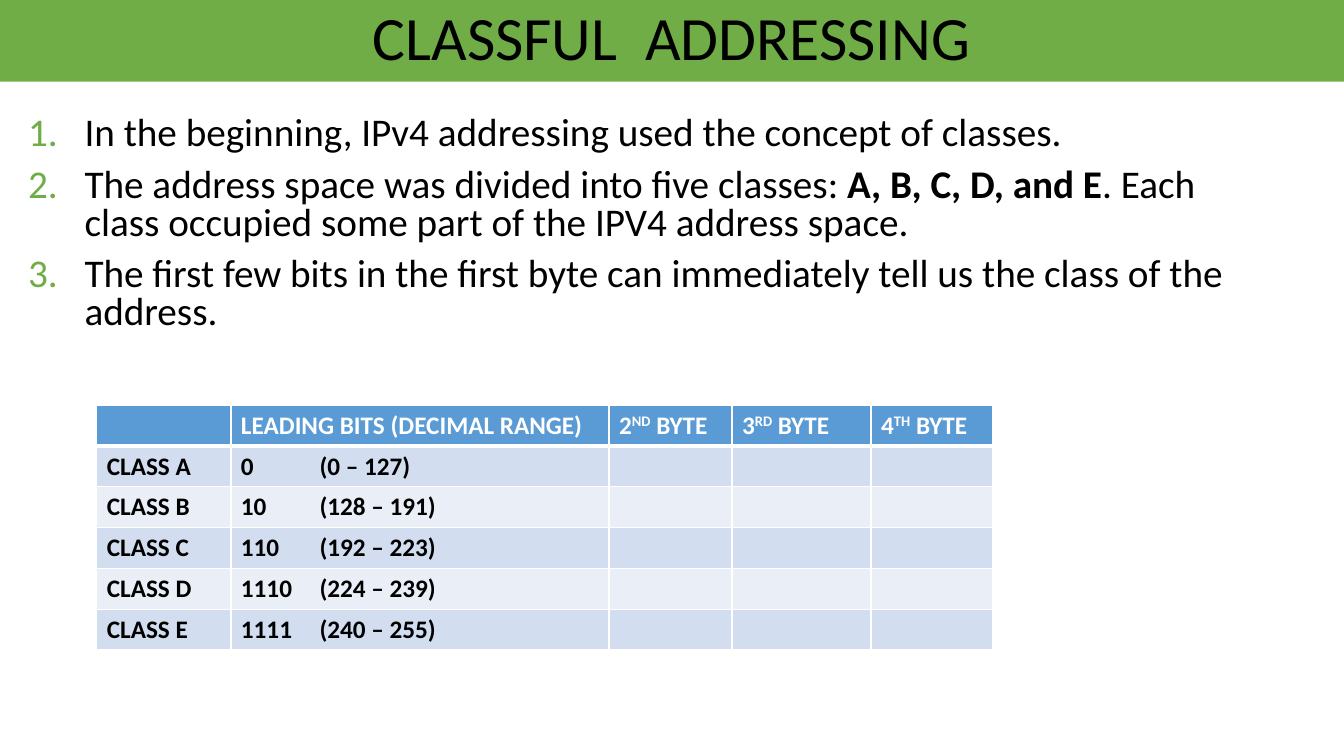
import pptx
import pptx.dml.color
import pptx.enum.shapes
import pptx.enum.text
import pptx.oxml
import pptx.oxml.ns
import pptx.util

RGBColor = pptx.dml.color.RGBColor
GREEN = RGBColor(0x70, 0xAD, 0x47)
BLUE = RGBColor(0x5B, 0x9B, 0xD5)
BAND_DARK = RGBColor(0xD2, 0xDE, 0xEF)
BAND_LIGHT = RGBColor(0xEA, 0xEF, 0xF7)
BLACK = RGBColor(0, 0, 0)
WHITE = RGBColor(0xFF, 0xFF, 0xFF)

FONT = "Calibri"
WIDTH = pptx.util.Inches(13.33)
HEIGHT = pptx.util.Inches(7.5)
NUMBER_INDENT = pptx.util.Inches(0.56)
RANGE_TAB = pptx.util.Inches(0.78)

# Each paragraph is a list of (text, style) spans
POINTS = [
    [("In the beginning, IPv4 addressing used the concept of classes.", "")],
    [("The address space was divided into five classes: ", ""),
     ("A, B, C, D, and E", "bold"),
     (". Each class occupied some part of the IPV4 address space.", "")],
    [("The first few bits in the first byte can immediately tell us "
      "the class of the address.", "")],
]
COLUMN_SHARES = [9.98, 28.13, 9.15, 10.35, 9.08]
ROW_SHARE = 5.4
BYTES = [("2", "ND"), ("3", "RD"), ("4", "TH")]
CLASSES = [
    ("A", "0", "0 – 127"),
    ("B", "10", "128 – 191"),
    ("C", "110", "192 – 223"),
    ("D", "1110", "224 – 239"),
    ("E", "1111", "240 – 255"),
]


def across(percent):
    return round(WIDTH * percent / 100)


def down(percent):
    return round(HEIGHT * percent / 100)


def add_xml(parent, markup):
    """Append a DrawingML element written without its namespace declaration."""
    tag, rest = markup.split(" ", 1)
    namespace = pptx.oxml.ns.nsdecls("a")
    parent.append(pptx.oxml.parse_xml(f"{tag} {namespace} {rest}"))


def style_paragraph(para, size, color, bold=None):
    para.font.name = FONT
    para.font.size = pptx.util.Pt(size)
    para.font.color.rgb = color
    para.font.bold = bold


def add_spans(para, spans):
    for text, style in spans:
        span = para.add_run()
        span.text = text
        if style == "bold":
            span.font.bold = True
        elif style == "superscript":
            span.font._element.set("baseline", "30000")


def add_title(page, text):
    banner = page.shapes.add_shape(
        pptx.enum.shapes.MSO_SHAPE.RECTANGLE, 0, 0, WIDTH, down(10.8))
    banner.shadow.inherit = False
    banner.fill.solid()
    banner.fill.fore_color.rgb = GREEN
    banner.line.fill.background()
    frame = banner.text_frame
    frame.vertical_anchor = pptx.enum.text.MSO_ANCHOR.MIDDLE
    para = frame.paragraphs[0]
    para.text = text
    para.alignment = pptx.enum.text.PP_ALIGN.CENTER
    para.line_spacing = 0.9
    style_paragraph(para, 44, BLACK)


def add_numbered_list(page, points):
    box = page.shapes.add_textbox(
        across(1.35), down(14.8), across(93.77), down(32.27))
    frame = box.text_frame
    frame.word_wrap = True
    for index, spans in enumerate(points):
        para = frame.add_paragraph() if index else frame.paragraphs[0]
        properties = para._p.get_or_add_pPr()
        properties.set("marL", str(NUMBER_INDENT))
        properties.set("indent", str(-NUMBER_INDENT))
        add_xml(properties, f'<a:buClr ><a:srgbClr val="{GREEN}"/></a:buClr>')
        add_xml(properties, '<a:buAutoNum type="arabicPeriod"/>')
        para.line_spacing = 0.8
        if index:
            para.space_before = pptx.util.Pt(10)
        add_spans(para, spans)
        style_paragraph(para, 28, BLACK)


def style_cell(cell, fill, top, bottom):
    """Give a cell white borders (top and bottom in points) and a fill."""
    properties = cell._tc.get_or_add_tcPr()
    for side, points in (("L", 1), ("R", 1), ("T", top), ("B", bottom)):
        add_xml(properties,
                f'<a:ln{side} w="{pptx.util.Pt(points)}"><a:solidFill>'
                f'<a:srgbClr val="{WHITE}"/></a:solidFill></a:ln{side}>')
    cell.fill.solid()
    cell.fill.fore_color.rgb = fill


def add_class_table(page):
    header = [[], [("LEADING BITS (DECIMAL RANGE)", "")]]
    header += [[(number, ""), (suffix, "superscript"), (" BYTE", "")]
               for number, suffix in BYTES]
    rows = [header]
    for letter, bits, span in CLASSES:
        rows.append([[(f"CLASS {letter}", "")], [(f"{bits}\t({span})", "")],
                     [], [], []])

    table = page.shapes.add_table(
        len(rows), len(COLUMN_SHARES), across(7.2), down(53.6),
        across(sum(COLUMN_SHARES)), down(ROW_SHARE * len(rows))).table
    for column, share in zip(table.columns, COLUMN_SHARES):
        column.width = across(share)

    for r, row in enumerate(rows):
        fill = BLUE if r == 0 else (BAND_LIGHT, BAND_DARK)[r % 2]
        for c, spans in enumerate(row):
            cell = table.cell(r, c)
            style_cell(cell, fill, 3 if r == 1 else 1, 3 if r == 0 else 1)
            para = cell.text_frame.paragraphs[0]
            if r and c == 1:
                add_xml(para._p.get_or_add_pPr(),
                        f'<a:tabLst ><a:tab pos="{RANGE_TAB}" algn="l"/></a:tabLst>')
            add_spans(para, spans)
            style_paragraph(para, 18, BLACK if r else WHITE, bold=True)


def main():
    deck = pptx.Presentation()
    deck.slide_width = WIDTH
    deck.slide_height = HEIGHT
    page = deck.slides.add_slide(deck.slide_layouts[6])
    add_title(page, "CLASSFUL  ADDRESSING")
    add_numbered_list(page, POINTS)
    add_class_table(page)
    deck.save("out.pptx")


if __name__ == "__main__":
    main()
